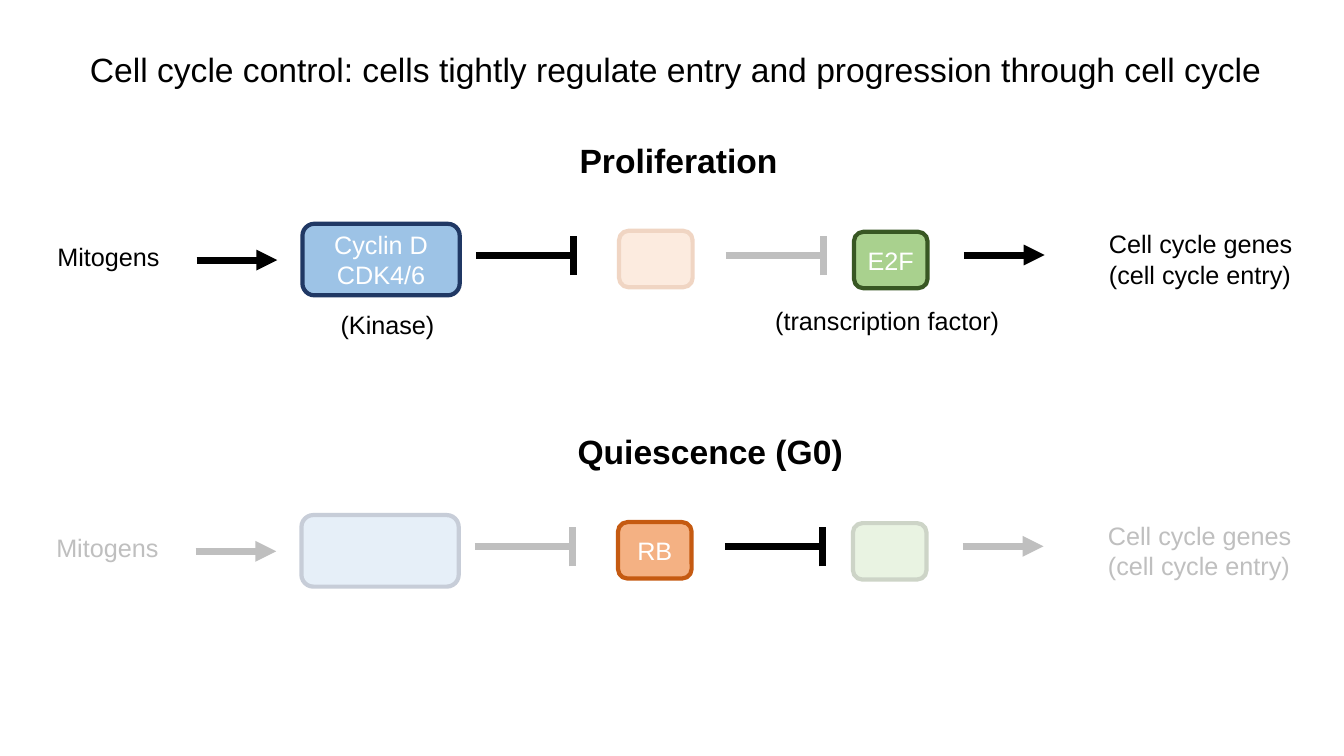
from dataclasses import dataclass

from lxml import etree
from pptx import Presentation
from pptx import util as u
from pptx.dml.color import RGBColor
from pptx.enum import shapes, text
from pptx.oxml.ns import qn

COLORS = {
    "ink": "000000", "white": "FFFFFF",
    "kinase": "9DC3E6", "kinase_edge": "203864",
    "rb": "F4B183", "rb_edge": "C55A11",
    "e2f": "A9D18E", "e2f_edge": "385723",
}
FONT = "Arial"


@dataclass
class Protein:
    name: str
    color: str
    left: float
    top: float
    width: float
    height: float


@dataclass
class Label:
    words: str
    left: float
    top: float
    width: float
    height: float
    size: int = 18
    bold: bool = False


@dataclass
class Link:
    start: float
    end: float
    y: float
    inhibits: bool


@dataclass
class Row:
    dx: float
    dy: float
    active: tuple


# One pathway, placed as in the upper row
PROTEINS = [
    Protein("Cyclin D CDK4/6", "kinase", 3.0, 2.22, 1.56, 0.71),
    Protein("RB", "rb", 6.14, 2.29, 0.73, 0.56),
    Protein("E2F", "e2f", 8.47, 2.3, 0.73, 0.56),
]
ENDS = [
    Label("Mitogens", 0.47, 2.34, 1.39, 0.4),
    Label("Cell cycle genes (cell cycle entry)", 10.9, 2.22, 2.43, 0.71),
]
LINKS = [
    Link(1.95, 2.75, 2.58, False),
    Link(4.72, 5.69, 2.53, True),
    Link(7.2, 8.17, 2.53, True),
    Link(9.56, 10.36, 2.53, False),
]
# Only the active proteins of a row carry their names
ROWS = [Row(0, 0, ("kinase", "e2f")), Row(-0.01, 2.89, ("rb",))]

# Translucent panels that fade the inactive parts: left, top, width, height
VEILS = [(8.32, 4.97, 4.81, 1.13), (6.07, 2.18, 2.25, 0.71), (0.4, 4.92, 5.53, 1.13)]
NOTES = [
    Label("Proliferation", 5.65, 1.34, 2.45, 0.5, 24, True),
    Label("(transcription factor)", 7.59, 2.98, 2.46, 0.4),
    Label("Quiescence (G0)", 5.63, 4.23, 3.15, 0.5, 24, True),
    Label("(Kinase)", 3.28, 3.02, 1.17, 0.4),
]


def rgb(name: str) -> RGBColor:
    return RGBColor.from_string(COLORS[name])


def inches(*lengths: float) -> list:
    return [u.Inches(length) for length in lengths]


def write(frame, words: str, *, size: int = 18, bold: bool = False, color: str = "ink",
          align=text.PP_ALIGN.LEFT, anchor=text.MSO_ANCHOR.TOP):
    frame.word_wrap = True
    frame.vertical_anchor = anchor
    para = frame.paragraphs[0]
    para.alignment = align
    span = para.add_run()
    span.text = words
    span.font.name = FONT
    span.font.size = u.Pt(size)
    span.font.bold = bold
    span.font.color.rgb = rgb(color)
    return para


def add_label(page, label: Label, dx: float = 0, dy: float = 0) -> None:
    box = page.shapes.add_textbox(
        *inches(label.left + dx, label.top + dy, label.width, label.height))
    write(box.text_frame, label.words, size=label.size, bold=label.bold)


def add_protein(page, protein: Protein, row: Row) -> None:
    box = page.shapes.add_shape(
        shapes.MSO_SHAPE.ROUNDED_RECTANGLE,
        *inches(protein.left + row.dx, protein.top + row.dy, protein.width, protein.height))
    box.shadow.inherit = False
    box.fill.solid()
    box.fill.fore_color.rgb = rgb(protein.color)
    box.line.color.rgb = rgb(protein.color + "_edge")
    box.line.width = u.Pt(3)
    if protein.color in row.active:
        write(box.text_frame, protein.name, color="white",
              align=text.PP_ALIGN.CENTER, anchor=text.MSO_ANCHOR.MIDDLE)


def add_line(page, x1: float, y1: float, x2: float, y2: float, arrow: bool = False) -> None:
    line = page.shapes.add_connector(
        shapes.MSO_CONNECTOR.STRAIGHT, *inches(x1, y1, x2, y2))
    line.line.color.rgb = rgb("ink")
    line.line.width = u.Pt(5)
    if arrow:
        etree.SubElement(line.line._get_or_add_ln(), qn("a:tailEnd"), type="triangle")
    etree.SubElement(line._element.spPr, qn("a:effectLst"))


def add_link(page, link: Link, row: Row) -> None:
    start, end, y = link.start + row.dx, link.end + row.dx, link.y + row.dy
    if link.inhibits:
        add_line(page, end, y + 0.2, end, y - 0.19)
    add_line(page, start, y, end, y, arrow=not link.inhibits)


def add_veil(page, place: tuple) -> None:
    veil = page.shapes.add_shape(shapes.MSO_SHAPE.RECTANGLE, *inches(*place))
    veil.shadow.inherit = False
    veil.fill.solid()
    veil.fill.fore_color.rgb = rgb("white")
    color = veil.fill._xPr.find(qn("a:solidFill")).find(qn("a:srgbClr"))
    etree.SubElement(color, qn("a:alpha"), val="75000")
    veil.line.fill.background()


def main() -> None:
    deck = Presentation()
    deck.slide_width, deck.slide_height = inches(13.33, 7.5)
    page = deck.slides.add_slide(deck.slide_layouts[5])

    # Title
    title = page.shapes.title
    title.left, title.top, title.width, title.height = inches(0.26, 0.4, 12.88, 0.62)
    heading = write(
        title.text_frame,
        "Cell cycle control: cells tightly regulate entry and progression through cell cycle",
        size=24, align=text.PP_ALIGN.CENTER, anchor=text.MSO_ANCHOR.MIDDLE)
    heading.line_spacing = 0.9

    # Both pathways
    for row in ROWS:
        for label in ENDS:
            add_label(page, label, row.dx, row.dy)
        for link in LINKS:
            add_link(page, link, row)
        for protein in PROTEINS:
            add_protein(page, protein, row)

    # Faded parts, then headings and notes on top
    for place in VEILS:
        add_veil(page, place)
    for note in NOTES:
        add_label(page, note)

    deck.save("out.pptx")


if __name__ == "__main__":
    main()
